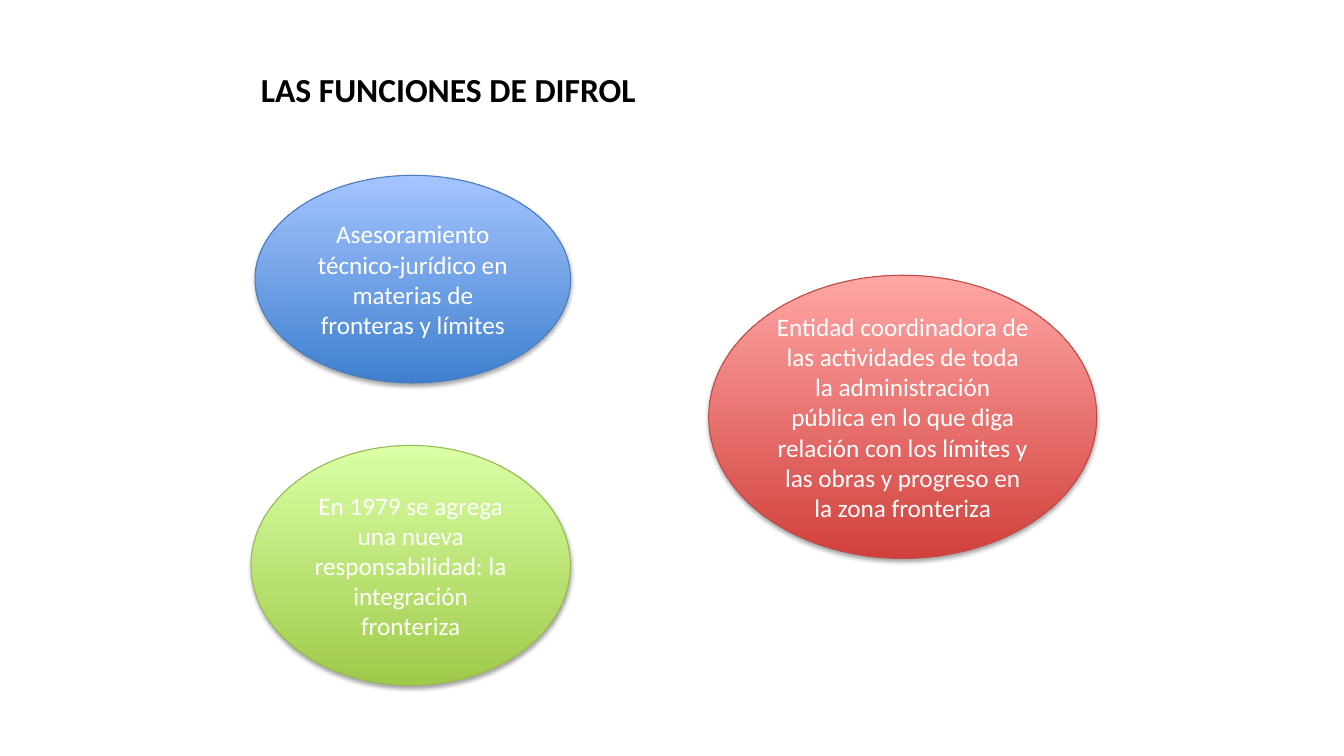
from lxml import etree
from pptx import Presentation
from pptx.dml.color import RGBColor
from pptx.enum.shapes import MSO_SHAPE
from pptx.enum.text import MSO_ANCHOR, MSO_AUTO_SIZE, PP_ALIGN
from pptx.oxml.ns import qn
from pptx.util import Pt

OVAL = MSO_SHAPE.OVAL
MIDDLE = MSO_ANCHOR.MIDDLE
FIT_SHAPE = MSO_AUTO_SIZE.SHAPE_TO_FIT_TEXT
CENTER = PP_ALIGN.CENTER
LEFT = PP_ALIGN.LEFT

HEADING = "LAS FUNCIONES DE DIFROL"
HEADING_BOX = (179.3, 45.4, 285, 36)
HEADING_FONT = {"name": "Calibri", "size": Pt(24), "bold": True}
DUTY_FONT = {"name": "Calibri", "size": Pt(18), "bold": False}

DUTIES = [
    ("Asesoramiento técnico-jurídico en materias de fronteras y límites",
     (182.2, 125.3, 225.4, 148.3), ("3F80CE", "A4C4FF"), "4B7EBC"),
    ("Entidad coordinadora de las actividades de toda la administración "
     "pública en lo que diga relación con los límites y las obras y progreso "
     "en la zona fronteriza",
     (506.2, 196.6, 277.2, 202.3), ("D1403C", "FFA6A5"), "BF4C48"),
    ("En 1979 se agrega una nueva responsabilidad: la integración fronteriza",
     (179.3, 318.2, 228.2, 171.4), ("A0CA4A", "DAFFA5"), "98B955"),
]


def rgb(code):
    """Return the colour for a hex string."""
    return RGBColor.from_string(code)


def write(frame, wording, font, color, align):
    """Write one formatted paragraph into a text frame."""
    paragraph = frame.paragraphs[0]
    paragraph.alignment = align
    run = paragraph.add_run()
    run.text = wording
    for attribute, value in font.items():
        setattr(run.font, attribute, value)
    run.font.color.rgb = rgb(color)


def drop_shadow(shape):
    """Give a shape a soft black shadow straight below it."""
    shape.shadow.inherit = False
    effects = shape.element.spPr.find(qn("a:effectLst"))
    shadow = etree.SubElement(
        effects, qn("a:outerShdw"), blurRad=str(Pt(3.15)), dist=str(Pt(1.8)),
        dir="5400000", rotWithShape="0")
    black = etree.SubElement(shadow, qn("a:srgbClr"), val="000000")
    etree.SubElement(black, qn("a:alpha"), val="35000")


def add_duty(slide, wording, box, shades, outline):
    """Add an ellipse shaded from bottom to top that holds one duty."""
    duty = slide.shapes.add_shape(OVAL, *map(Pt, box))
    duty.fill.gradient()
    duty.fill.gradient_angle = 90
    for stop, shade in zip(duty.fill.gradient_stops, shades):
        stop.color.rgb = rgb(shade)
    duty.line.color.rgb = rgb(outline)
    duty.line.width = Pt(0.75)
    drop_shadow(duty)
    duty.text_frame.word_wrap = True
    duty.text_frame.vertical_anchor = MIDDLE
    write(duty.text_frame, wording, DUTY_FONT, "FFFFFF", CENTER)


def add_heading(slide):
    """Add the slide heading on one line."""
    frame = slide.shapes.add_textbox(*map(Pt, HEADING_BOX)).text_frame
    frame.word_wrap = False
    frame.auto_size = FIT_SHAPE
    write(frame, HEADING, HEADING_FONT, "000000", LEFT)


def main():
    """Build the slide and save it."""
    deck = Presentation()
    deck.slide_width, deck.slide_height = Pt(960), Pt(540)
    slide = deck.slides.add_slide(deck.slide_layouts[6])
    for duty in DUTIES:
        add_duty(slide, *duty)
    add_heading(slide)
    deck.save("out.pptx")


if __name__ == "__main__":
    main()
